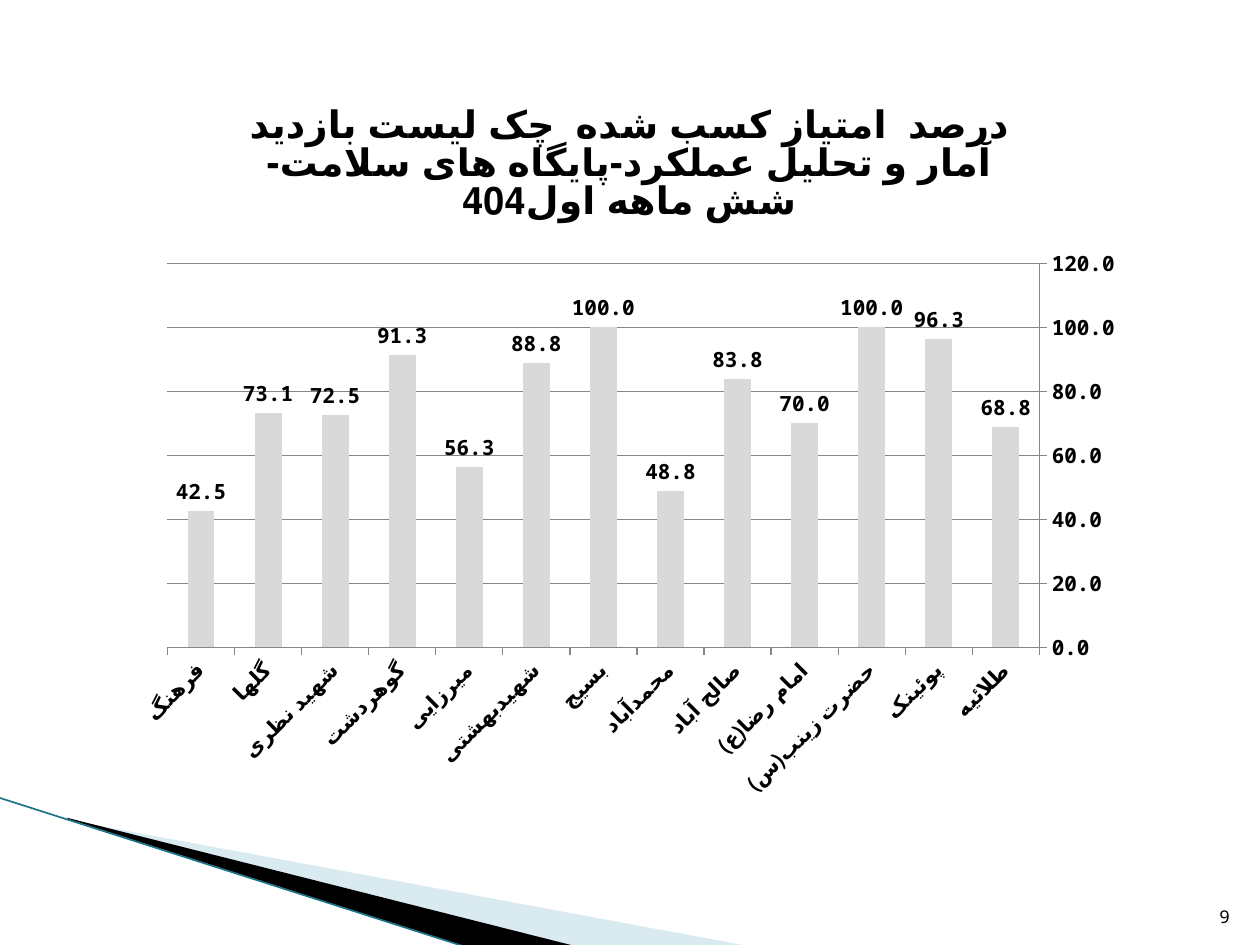
"""Build a slide with a right-to-left column chart of checklist scores by health post."""
import pptx
import pptx.chart.data
import pptx.dml.color
import pptx.enum.chart
import pptx.enum.text
import pptx.oxml
import pptx.oxml.ns
import pptx.util

COLORS = {"text": "000000", "bar": "D9D9D9", "axis": "868686",
          "pale": "A0CBDC", "dark": "000000", "edge": "1B7488"}
FONT = "Noto Sans Mono"
TITLE = ("درصد  امتیاز کسب شده  چک لیست بازدید آمار و تحلیل "
         "عملکرد-پایگاه های سلامت- شش ماهه اول404")
SCORES = {
    "طلائیه": 68.8, "پوئینک": 96.3, "حضرت زینب(س)": 100, "امام رضا(ع)": 70,
    "صالح آباد": 83.8, "محمدآباد": 48.8, "بسیج": 100, "شهیدبهشتی": 88.8,
    "میرزایی": 56.3, "گوهردشت": 91.3, "شهید نظری": 72.5, "گلها": 73.1,
    "فرهنگ": 42.5,
}
Inches, Pt = pptx.util.Inches, pptx.util.Pt
qn = pptx.oxml.ns.qn


def rgb(name):
    return pptx.dml.color.RGBColor.from_string(COLORS[name])


def style(font, size, bold):
    font.name, font.size, font.bold = FONT, Pt(size), bold
    font.color.rgb = rgb("text")


deck = pptx.Presentation()
deck.slide_width, deck.slide_height = Inches(10), Inches(7.5)
page = deck.slides.add_slide(deck.slide_layouts[6])

wedges = [
    ("pale", 40, [(0.55, 6.51), (5.95, 7.51), (4.56, 7.51), (0.55, 6.5)]),
    ("dark", 100, [(0.53, 6.49), (4.57, 7.51), (3.72, 7.52), (0.54, 6.5)]),
]
for color, opacity, corners in wedges:
    points = [(Inches(x), Inches(y)) for x, y in corners]
    builder = page.shapes.build_freeform(*points[0])
    builder.add_line_segments(points[1:], close=True)
    wedge = builder.convert_to_shape()
    wedge.shadow.inherit = False
    wedge.fill.solid()
    wedge.fill.fore_color.rgb = rgb(color)
    wedge.line.fill.background()
    if opacity < 100:
        shade = wedge.fill._xPr.find(".//" + qn("a:srgbClr"))
        alpha = pptx.oxml.parse_xml(
            f'<a:alpha {pptx.oxml.ns.nsdecls("a")} val="{opacity * 1000}"/>')
        shade.append(alpha)

edge = page.shapes.add_connector(1, Inches(-0.01), Inches(6.33), Inches(3.71), Inches(7.52))
edge.line.color.rgb = rgb("edge")
edge.line.width = Pt(0.95)
edge._element.spPr.append(
    pptx.oxml.parse_xml(f'<a:effectLst {pptx.oxml.ns.nsdecls("a")}/>'))

box = page.shapes.add_textbox(Inches(9.46), Inches(7.01), Inches(0.4), Inches(0.4))
frame = box.text_frame
frame.word_wrap = True
frame.vertical_anchor = pptx.enum.text.MSO_ANCHOR.BOTTOM
para = frame.paragraphs[0]
para.text = "9"
para.alignment = pptx.enum.text.PP_ALIGN.RIGHT
style(para.font, 10, False)

data = pptx.chart.data.CategoryChartData(number_format="0.0")
data.categories = list(SCORES)
data.add_series("Series 1", list(SCORES.values()))
left, top, width, height = 0.98, 0.6, 8.03, 5.83
chart = page.shapes.add_chart(
    pptx.enum.chart.XL_CHART_TYPE.COLUMN_CLUSTERED,
    Inches(left), Inches(top), Inches(width), Inches(height), data).chart
chart.has_legend = False
style(chart.font, 18, False)

chart.has_title = True
heading = chart.chart_title.text_frame.paragraphs[0]
heading.text = TITLE
heading._p.get_or_add_pPr().set("rtl", "1")
for font in (heading.font, heading.runs[0].font):
    style(font, 21.6, True)

plot = chart.plots[0]
plot.gap_width = 150
plot.vary_by_categories = False
bars = plot.series[0].format.fill
bars.solid()
bars.fore_color.rgb = rgb("bar")
plot.has_data_labels = True
labels = plot.data_labels
labels.show_value = True
labels.number_format, labels.number_format_is_linked = "0.0", False
labels.position = pptx.enum.chart.XL_LABEL_POSITION.OUTSIDE_END
style(labels.font, 12, True)

for axis in (chart.category_axis, chart.value_axis):
    style(axis.tick_labels.font, 12, True)
    axis.major_tick_mark = pptx.enum.chart.XL_TICK_MARK.OUTSIDE
    axis.format.line.color.rgb = rgb("axis")
chart.category_axis.reverse_order = True
chart.category_axis._element.find(".//" + qn("a:bodyPr")).set("rot", "-2700000")
scale = chart.value_axis
scale.minimum_scale, scale.maximum_scale, scale.major_unit = 0, 120, 20
scale.tick_labels.number_format = "0.0"
scale.tick_labels.number_format_is_linked = False
scale.has_major_gridlines = True
scale.major_gridlines.format.line.color.rgb = rgb("axis")

area = chart._chartSpace.chart.plotArea
for layout in area.findall(qn("c:layout")):
    area.remove(layout)
shares = {"x": (1.33 - left) / width, "y": (2.09 - top) / height,
          "w": 6.92 / width, "h": 3.05 / height}
modes = '<c:layoutTarget val="inner"/><c:xMode val="edge"/><c:yMode val="edge"/>'
sides = "".join(f'<c:{side} val="{share}"/>' for side, share in shares.items())
area.insert(0, pptx.oxml.parse_xml(
    f'<c:layout {pptx.oxml.ns.nsdecls("c")}><c:manualLayout>{modes}{sides}'
    "</c:manualLayout></c:layout>"))

deck.save("out.pptx")
